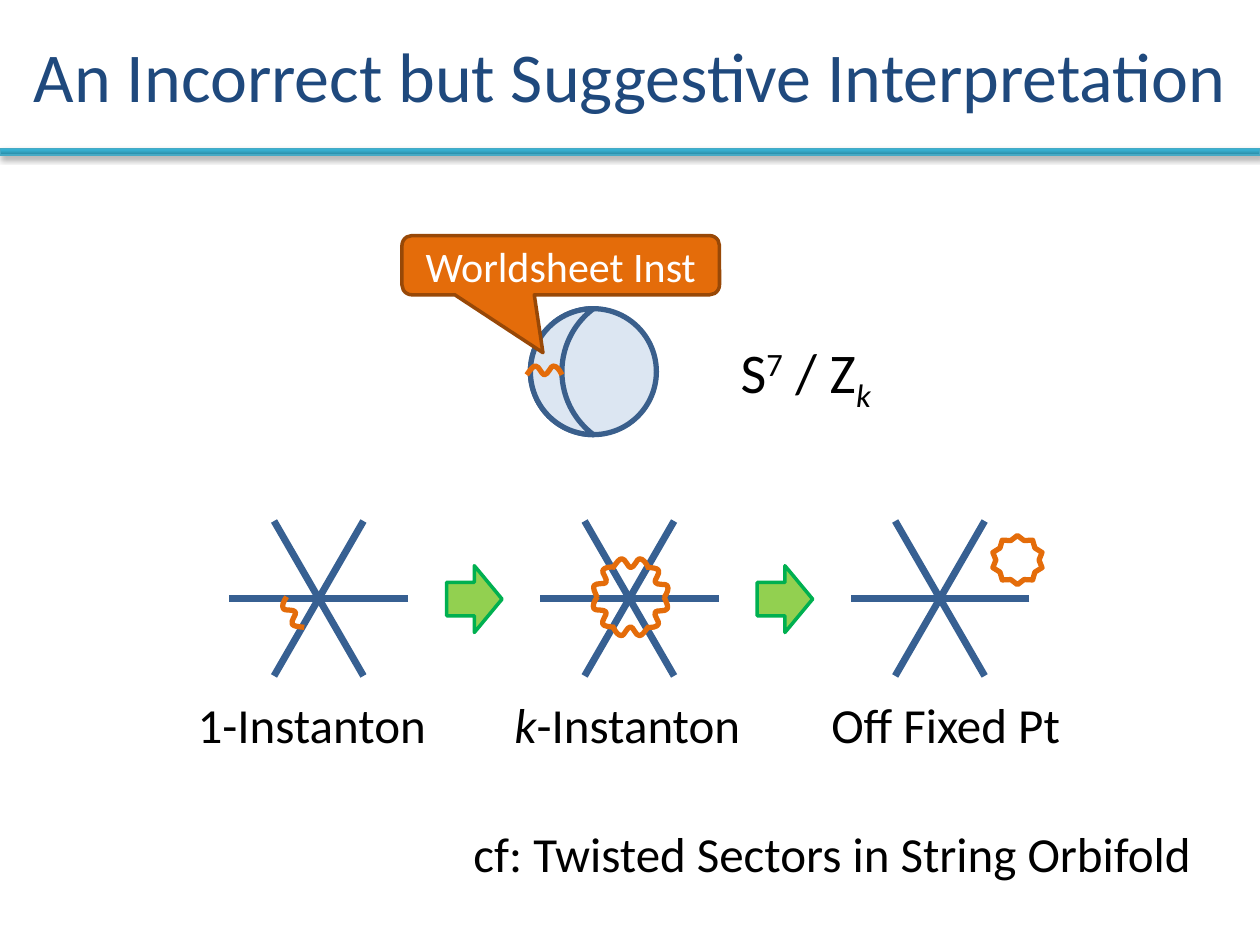
from math import cos, radians, sin

from lxml import etree
from pptx import Presentation
from pptx import util as u
from pptx.dml import color
from pptx.enum import shapes, text
from pptx.oxml import ns

COLORS = {
    "title": "1F497D", "rule_dark": "2A88A2", "rule_light": "37B1D2",
    "rule_edge": "46AAC5", "sphere": "DCE6F2", "sphere_edge": "3A5F8C",
    "plane": "376092", "instanton": "E46C0A", "callout_edge": "984807",
    "arrow": "92D050", "arrow_edge": "00B050", "ink": "000000", "white": "FFFFFF",
}
KIND = shapes.MSO_SHAPE
WAVE_START = (0, 0.07)
WAVE_CURVES = [
    (0.03, 0.03), (0.05, 0), (0.07, 0),
    (0.1, 0), (0.12, 0.07), (0.14, 0.07),
    (0.17, 0.07), (0.19, 0), (0.21, 0),
    (0.24, 0), (0.26, 0.03), (0.28, 0.07),
]


def rgb(name):
    return color.RGBColor.from_string(COLORS[name])


def inches(*lengths):
    return [u.Inches(length) for length in lengths]


def paint(shape, fill, edge, weight):
    shape.shadow.inherit = False
    if fill:
        shape.fill.solid()
        shape.fill.fore_color.rgb = rgb(fill)
    else:
        shape.fill.background()
    shape.line.color.rgb = rgb(edge)
    shape.line.width = u.Pt(weight)


def add_preset(parent, kind, box, fill, edge, weight):
    shape = parent.shapes.add_shape(kind, *inches(*box))
    paint(shape, fill, edge, weight)
    return shape


def write(shape, parts, size, ink="ink", align=text.PP_ALIGN.LEFT, **frame_format):
    for name, value in frame_format.items():
        setattr(shape.text_frame, name, value)
    para = shape.text_frame.paragraphs[0]
    para.alignment = align
    for words, italic, baseline in parts:
        span = para.add_run()
        span.text = words
        span_format = {"name": "Calibri", "size": u.Pt(size), "italic": italic}
        for name, value in span_format.items():
            setattr(span.font, name, value)
        span.font.color.rgb = rgb(ink)
        if baseline:
            span.font._element.set("baseline", str(baseline * 1000))


def add_label(page, box, parts, size):
    label = page.shapes.add_textbox(*inches(*box))
    write(label, parts, size, word_wrap=False,
          auto_size=text.MSO_AUTO_SIZE.SHAPE_TO_FIT_TEXT)


def add_wave(page, center_x, center_y, angle=0):
    left, top = center_x - 0.14, center_y - 0.035
    points = [inches(left + x, top + y) for x, y in [WAVE_START] + WAVE_CURVES]
    builder = page.shapes.build_freeform(*points[0])
    builder.add_line_segments(points[1:], close=False)
    wave = builder.convert_to_shape()
    segments = list(wave._element.iter(ns.qn("a:lnTo")))
    for index in range(0, len(segments), 3):
        curve = etree.SubElement(segments[index].getparent(), ns.qn("a:cubicBezTo"))
        for segment in segments[index:index + 3]:
            curve.append(segment[0])
            segment.getparent().remove(segment)
    paint(wave, None, "instanton", 3)
    wave.rotation = angle


def add_header(page, box):
    left, top, width, height = box
    rule = add_preset(page, KIND.RECTANGLE, (left, top + height, width, 0.05),
                      None, "rule_edge", 0.75)
    rule.fill.gradient()
    rule.fill.gradient_angle = 90
    stops = zip(rule.fill.gradient_stops, ("rule_dark", "rule_light"), (0, 0.8))
    for stop, name, position in stops:
        stop.color.rgb = rgb(name)
        stop.position = position
    effects = rule._element.spPr.find(ns.qn("a:effectLst"))
    shadow = etree.SubElement(effects, ns.qn("a:outerShdw"), blurRad="40000",
                              dist="23000", dir="5400000", rotWithShape="0")
    tint = etree.SubElement(shadow, ns.qn("a:srgbClr"), val=COLORS["ink"])
    etree.SubElement(tint, ns.qn("a:alpha"), val="35000")
    title = page.shapes.add_textbox(*inches(*box))
    write(title, [("An Incorrect but Suggestive Interpretation", None, 0)], 40,
          "title", text.PP_ALIGN.CENTER, word_wrap=True,
          vertical_anchor=text.MSO_ANCHOR.MIDDLE)


def add_sphere(page, box):
    left, top, width, height = box
    group = page.shapes.add_group_shape()
    for kind, share in ((KIND.OVAL, 1), (KIND.MOON, 0.5)):
        add_preset(group, kind, (left, top, width * share, height),
                   "sphere", "sphere_edge", 3)
    add_label(page, (left + 1.57, top + 0.18, 1.29, 0.64),
              [("S", None, 0), ("7", None, 30), (" / Z", None, 0), ("k", True, -25)], 32)
    add_wave(page, left + 0.11, top + height / 2 - 0.01)
    callout = add_preset(page, KIND.ROUNDED_RECTANGULAR_CALLOUT,
                         (left - 1.02, top - 0.58, 2.52, 0.47),
                         "instanton", "callout_edge", 2)
    for index, value in enumerate((-0.056, 1.478, 0.167)):
        callout.adjustments[index] = value
    write(callout, [("Worldsheet Inst", None, 0)], 24, "white",
          text.PP_ALIGN.CENTER, word_wrap=True,
          vertical_anchor=text.MSO_ANCHOR.MIDDLE)


def add_stage(page, box, wave_angles):
    left, top, width, height = box
    radius = width / 2
    center_x, center_y = left + radius, top + height / 2
    for angle in (60, 120, 180):
        dx, dy = radius * cos(radians(angle)), radius * sin(radians(angle))
        plane = page.shapes.add_connector(
            shapes.MSO_CONNECTOR.STRAIGHT,
            *inches(center_x - dx, center_y - dy, center_x + dx, center_y + dy))
        plane.line.color.rgb = rgb("plane")
        plane.line.width = u.Pt(4)
        etree.SubElement(plane._element.spPr, ns.qn("a:effectLst"))
    for angle in wave_angles:
        add_wave(page, center_x + 0.01 + 0.26 * sin(radians(angle)),
                 center_y - 0.01 - 0.27 * cos(radians(angle)), angle)


def add_stages(page, box):
    left, top, width, height = box
    stage_width = 1.42
    pitch = (width - stage_width) / 2
    caption_pitch = 2.515
    stages = [
        ((240,), [("1-Instanton", None, 0)]),
        (range(0, 360, 60), [("k", True, 0), ("-Instanton", None, 0)]),
        ((), [("Off Fixed Pt", None, 0)]),
    ]
    for index, (wave_angles, caption) in enumerate(stages):
        stage_left = left + index * pitch
        add_stage(page, (stage_left, top, stage_width, height), wave_angles)
        add_label(page, (left - 0.35 + index * caption_pitch, top + height + 0.1,
                         2.04, 0.57), caption, 28)
        if index:
            add_preset(page, KIND.RIGHT_ARROW,
                       (stage_left - 0.74, top + height / 2 - 0.26, 0.44, 0.53),
                       "arrow", "arrow_edge", 2)
    free_ring = add_preset(page, KIND.STAR_10_POINT,
                           (left + width - 0.29, top + 0.11, 0.39, 0.39),
                           None, "instanton", 3)
    free_ring.adjustments[0] = 0.417


def main():
    deck = Presentation()
    deck.slide_width, deck.slide_height = inches(10, 7.5)
    page = deck.slides.add_slide(deck.slide_layouts[6])
    add_header(page, (0, 0, 10, 1.18))
    add_sphere(page, (4.21, 2.45, 1, 1))
    add_stages(page, (1.82, 4.14, 6.35, 1.22))
    add_label(page, (3.66, 6.49, 5.96, 0.57),
              [("cf: Twisted Sectors in String Orbifold", None, 0)], 28)
    deck.save("out.pptx")


if __name__ == "__main__":
    main()
